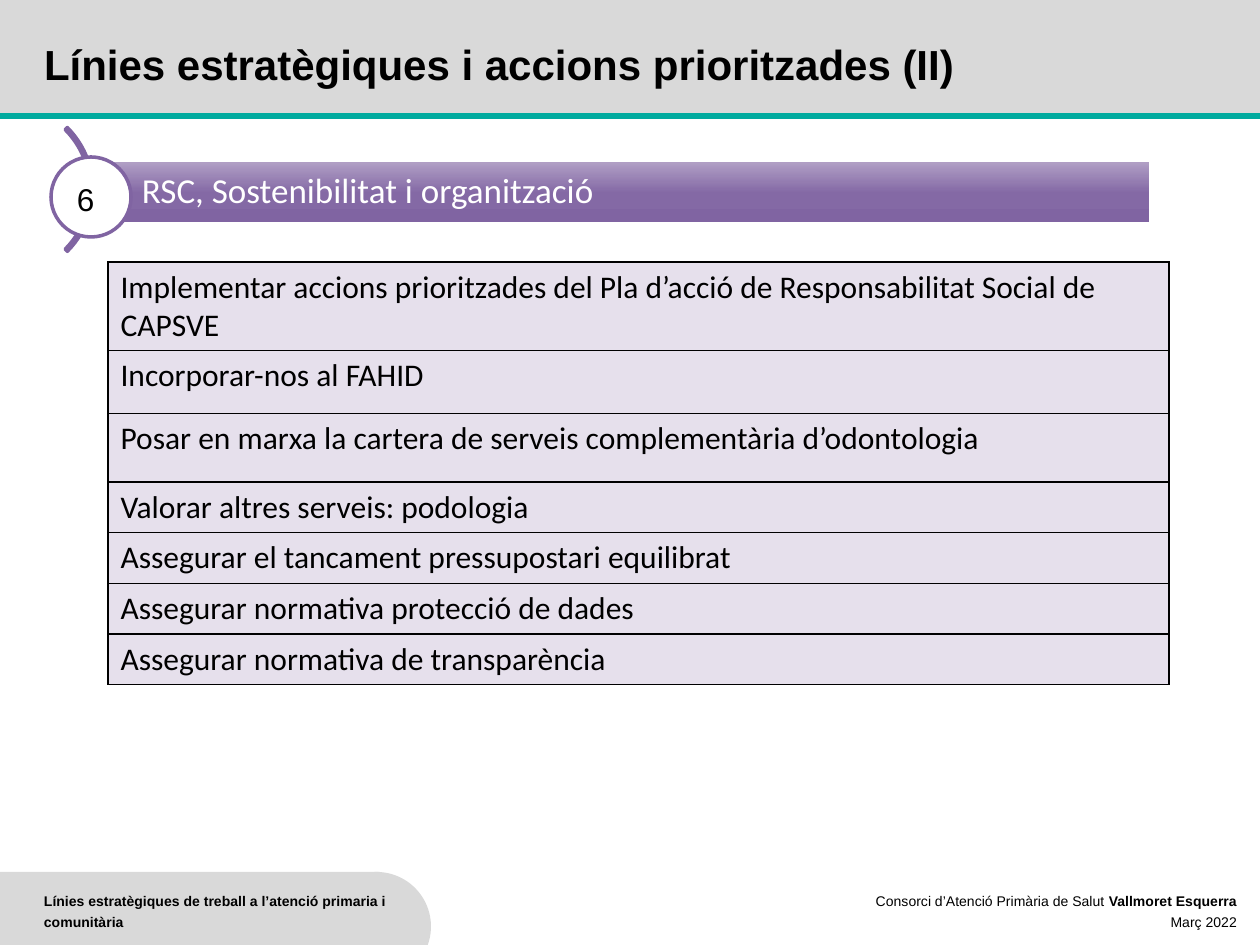
from copy import deepcopy

from lxml import etree
from pptx import Presentation
from pptx.dml.color import RGBColor
from pptx.enum.shapes import MSO_CONNECTOR, MSO_SHAPE
from pptx.enum.text import MSO_ANCHOR, PP_ALIGN
from pptx.oxml.ns import qn
from pptx.util import Emu, Pt

RECT, OVAL, ARC = MSO_SHAPE.RECTANGLE, MSO_SHAPE.OVAL, MSO_SHAPE.BLOCK_ARC
LEFT, RIGHT = PP_ALIGN.LEFT, PP_ALIGN.RIGHT
TOP, MIDDLE = MSO_ANCHOR.TOP, MSO_ANCHOR.MIDDLE
SCALE = 914400 / 126
COLORS = {
    "black": "000000", "white": "FFFFFF", "grey": "D9D9D9", "teal": "00AA9E",
    "purple": "8064A2", "mid": "8469A5", "light": "B3A2C7", "lilac": "E6E0EC",
}
ACTIONS = [
    ("Implementar accions prioritzades del Pla d’acció de Responsabilitat Social de CAPSVE", 88),
    ("Incorporar-nos al FAHID", 63),
    ("Posar en marxa la cartera de serveis complementària d’odontologia", 69),
    ("Valorar altres serveis: podologia", 50),
    ("Assegurar el tancament pressupostari equilibrat", 51),
    ("Assegurar normativa protecció de dades", 50),
    ("Assegurar normativa de transparència", 50),
]


def px(n):
    return Emu(round(n * SCALE))


def rgb(name):
    return RGBColor.from_string(COLORS[name])


def write(tf, paragraphs, size=18, font="Arial", color="black", bold=False,
          align=LEFT, spacing=None, anchor=TOP, insets=(13, 6, 13, 6)):
    """Fill a text frame; a paragraph is a string or a list of (text, bold)."""
    tf.word_wrap = True
    tf.vertical_anchor = anchor
    (tf.margin_left, tf.margin_top,
     tf.margin_right, tf.margin_bottom) = map(px, insets)
    for i, runs in enumerate(paragraphs):
        p = tf.add_paragraph() if i else tf.paragraphs[0]
        p.alignment = align
        if spacing:
            p.line_spacing = spacing
        for text, strong in [(runs, bold)] if isinstance(runs, str) else runs:
            r = p.add_run()
            r.text = text
            r.font.size, r.font.name, r.font.bold = Pt(size), font, strong
            r.font.color.rgb = rgb(color)


class Deck:
    def __init__(self, width, height):
        self.prs = Presentation()
        self.prs.slide_width, self.prs.slide_height = px(width), px(height)
        self.s = self.prs.slides.add_slide(self.prs.slide_layouts[6])

    def shape(self, kind, box, fill=None, line=None, width=2, adjust=()):
        sp = self.s.shapes.add_shape(kind, *map(px, box))
        sp.shadow.inherit = False
        for i, value in enumerate(adjust):
            sp.adjustments[i] = value
        if fill:
            sp.fill.solid()
            sp.fill.fore_color.rgb = rgb(fill)
        else:
            sp.fill.background()
        if line:
            sp.line.color.rgb = rgb(line)
            sp.line.width = Pt(width)
        else:
            sp.line.fill.background()
        return sp

    def gradient(self, sp, stops, angle):
        sp.fill.gradient()
        sp.fill.gradient_angle = angle
        gs_list = sp.fill._fill._gradFill.find(qn("a:gsLst"))
        while len(gs_list) < len(stops):
            gs_list.append(deepcopy(gs_list[0]))
        for stop, (position, color) in zip(sp.fill.gradient_stops, stops):
            stop.position = position
            stop.color.rgb = rgb(color)

    def text(self, box, paragraphs, **style):
        sp = self.s.shapes.add_textbox(*map(px, box))
        write(sp.text_frame, paragraphs, **style)

    def line(self, start, end, color, width):
        ln = self.s.shapes.add_connector(MSO_CONNECTOR.STRAIGHT, *map(px, start + end))
        ln.line.color.rgb = rgb(color)
        ln.line.width = Pt(width)
        etree.SubElement(ln._element.spPr, qn("a:effectLst"))

    def border(self, cell, color, width):
        tc_pr = cell._tc.get_or_add_tcPr()
        for i, side in enumerate(("lnL", "lnR", "lnT", "lnB")):
            ln = etree.Element(qn("a:" + side), w=str(Pt(width)))
            fill = etree.SubElement(ln, qn("a:solidFill"))
            etree.SubElement(fill, qn("a:srgbClr"), val=COLORS[color])
            tc_pr.insert(i, ln)

    def table(self, left, top, width, rows, fill, **style):
        height = sum(h for _, h in rows)
        table = self.s.shapes.add_table(
            len(rows), 1, *map(px, (left, top, width, height))).table
        table.first_row = table.horz_banding = False
        for i, (text, row_height) in enumerate(rows):
            table.rows[i].height = px(row_height)
            cell = table.cell(i, 0)
            cell.fill.solid()
            cell.fill.fore_color.rgb = rgb(fill)
            write(cell.text_frame, [text], **style)
            self.border(cell, "black", 1)


def main():
    deck = Deck(1260, 945)

    deck.shape(RECT, (0, 872, 380, 90), "grey")
    deck.shape(OVAL, (322, 872, 109, 109), "grey")
    deck.shape(RECT, (0, 0, 1260, 116), "grey")
    deck.line((0, 116), (1260, 116), "teal", 3)
    deck.text((31, 882, 381, 59),
              ["Línies estratègiques de treball a l’atenció primaria i comunitària"],
              size=8, bold=True, spacing=Pt(12))
    deck.text((850, 882, 400, 63),
              [[("Consorci d’Atenció Primària de Salut ", False),
                ("Vallmoret Esquerra", True)], "Març 2022"],
              size=8, align=RIGHT, spacing=Pt(12))
    deck.text((31, 44, 1075, 52), ["Línies estratègiques i accions prioritzades (II)"],
              size=24, bold=True, spacing=Pt(22))

    deck.table(108, 262, 1061, ACTIONS, "lilac", font="Calibri")

    deck.shape(ARC, (-82, 102, 175, 175), line="purple", adjust=(189, 27, 0.017))
    bar = deck.shape(RECT, (90, 160, 1061, 64), line="white")
    deck.gradient(bar, [(0, "purple"), (0.48, "mid"), (1, "light")], 90)
    write(bar.text_frame, ["RSC, Sostenibilitat i organització"], size=20,
          font="Calibri", color="white", spacing=0.9, anchor=MIDDLE,
          insets=(52, 8, 8, 8))
    deck.shape(OVAL, (51, 157, 80, 80), "white", "purple")
    deck.text((64, 174, 52, 50), ["6"])

    deck.prs.save("out.pptx")


if __name__ == "__main__":
    main()
